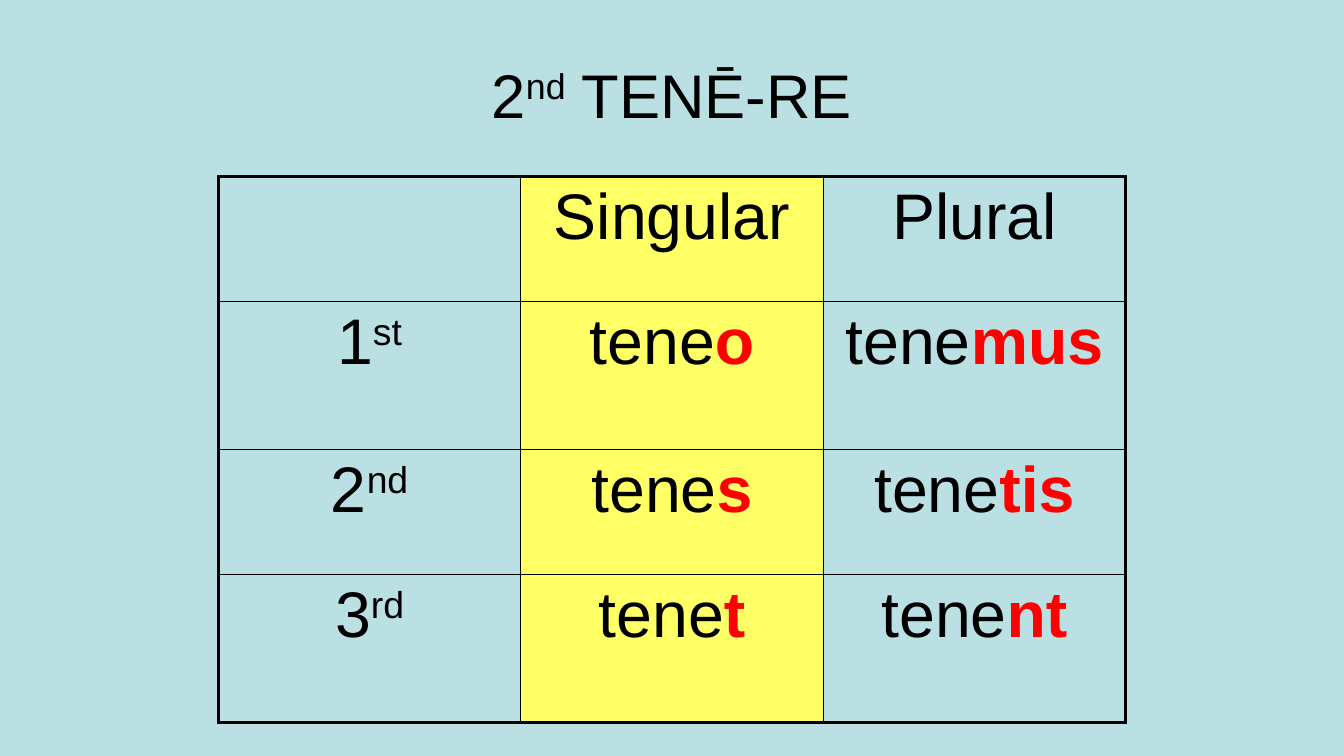
from lxml import etree
from pptx import Presentation
from pptx.dml.color import RGBColor
from pptx.enum.text import MSO_ANCHOR, MSO_AUTO_SIZE, PP_ALIGN
from pptx.oxml.ns import qn
from pptx.util import Pt

PX = 9525  # EMU in one px, 96 px to the inch
CENTER = PP_ALIGN.CENTER
MIDDLE = MSO_ANCHOR.MIDDLE
TOP = MSO_ANCHOR.TOP
FIXED = MSO_AUTO_SIZE.NONE

SKY = RGBColor(0xBB, 0xE0, 0xE3)
YELLOW = RGBColor(0xFF, 0xFF, 0x66)
BLACK = RGBColor(0x00, 0x00, 0x00)
RED = RGBColor(0xFF, 0x00, 0x00)

FONT = "Arial"
THIN, THICK = 1, 2.25
COL = 288
ROWS = [119, 141, 119, 141]
PERSONS = [
    ("1", "st", "o", "mus"),
    ("2", "nd", "s", "tis"),
    ("3", "rd", "t", "nt"),
]


def px(n):
    return n * PX


def add_run(para, text, size, color=BLACK, bold=False, raised=False):
    run = para.add_run()
    run.text = text
    font = run.font
    font.name, font.size, font.bold = FONT, Pt(size), bold
    font.color.rgb = color
    if raised:
        run._r.get_or_add_rPr().set("baseline", "30000")


def add_rank(para, digit, suffix, size):
    add_run(para, digit, size)
    add_run(para, suffix, size, raised=True)


def add_verb(para, ending, size):
    add_run(para, "tene", size)
    add_run(para, ending, size, RED, bold=True)


def add_title(slide):
    title = slide.shapes.title
    title.left, title.top = px(64), px(29)
    title.width, title.height = px(1152), px(120)
    frame = title.text_frame
    frame.auto_size = FIXED
    frame.vertical_anchor = MIDDLE
    para = frame.paragraphs[0]
    para.alignment = CENTER
    add_rank(para, "2", "nd", 44)
    add_run(para, " TENĒ-RE", 44)


def set_edge(cell, side, width):
    props = cell._tc.get_or_add_tcPr()
    line = etree.SubElement(props, qn("a:ln" + side), w=str(Pt(width)))
    fill = etree.SubElement(line, qn("a:solidFill"))
    etree.SubElement(fill, qn("a:srgbClr"), val=str(BLACK))


def style_cell(cell, row, col, last_row, last_col):
    # Thick lines on the outer frame, thin ones inside
    outer = {"L": col == 0, "R": col == last_col,
             "T": row == 0, "B": row == last_row}
    for side, edge in outer.items():
        set_edge(cell, side, THICK if edge else THIN)
    # The singular column is marked in yellow
    if col == 1:
        cell.fill.solid()
        cell.fill.fore_color.rgb = YELLOW
    else:
        cell.fill.background()
    cell.vertical_anchor = TOP
    cell.text_frame.paragraphs[0].alignment = CENTER


def add_grid(slide):
    frame = slide.shapes.add_table(len(ROWS), 3, px(208), px(168),
                                   px(3 * COL), px(sum(ROWS)))
    table = frame.table
    table.first_row = table.horz_banding = False
    for col in table.columns:
        col.width = px(COL)
    for r, high in enumerate(ROWS):
        table.rows[r].height = px(high)
        for c in range(3):
            style_cell(table.cell(r, c), r, c, len(ROWS) - 1, 2)
    return table


def fill_grid(table, size=46):
    def para(row, col):
        return table.cell(row, col).text_frame.paragraphs[0]

    # Headings
    for c, head in enumerate(["Singular", "Plural"], 1):
        add_run(para(0, c), head, size)
    # One row for each person
    for r, (digit, suffix, *ends) in enumerate(PERSONS, 1):
        add_rank(para(r, 0), digit, suffix, size)
        for c, ending in enumerate(ends, 1):
            add_verb(para(r, c), ending, size)


def main():
    deck = Presentation()
    deck.slide_width, deck.slide_height = px(1280), px(720)
    slide = deck.slides.add_slide(deck.slide_layouts[5])
    # Background
    back = slide.background.fill
    back.solid()
    back.fore_color.rgb = SKY
    # Title and verb table
    add_title(slide)
    fill_grid(add_grid(slide))
    deck.save("out.pptx")


if __name__ == "__main__":
    main()
